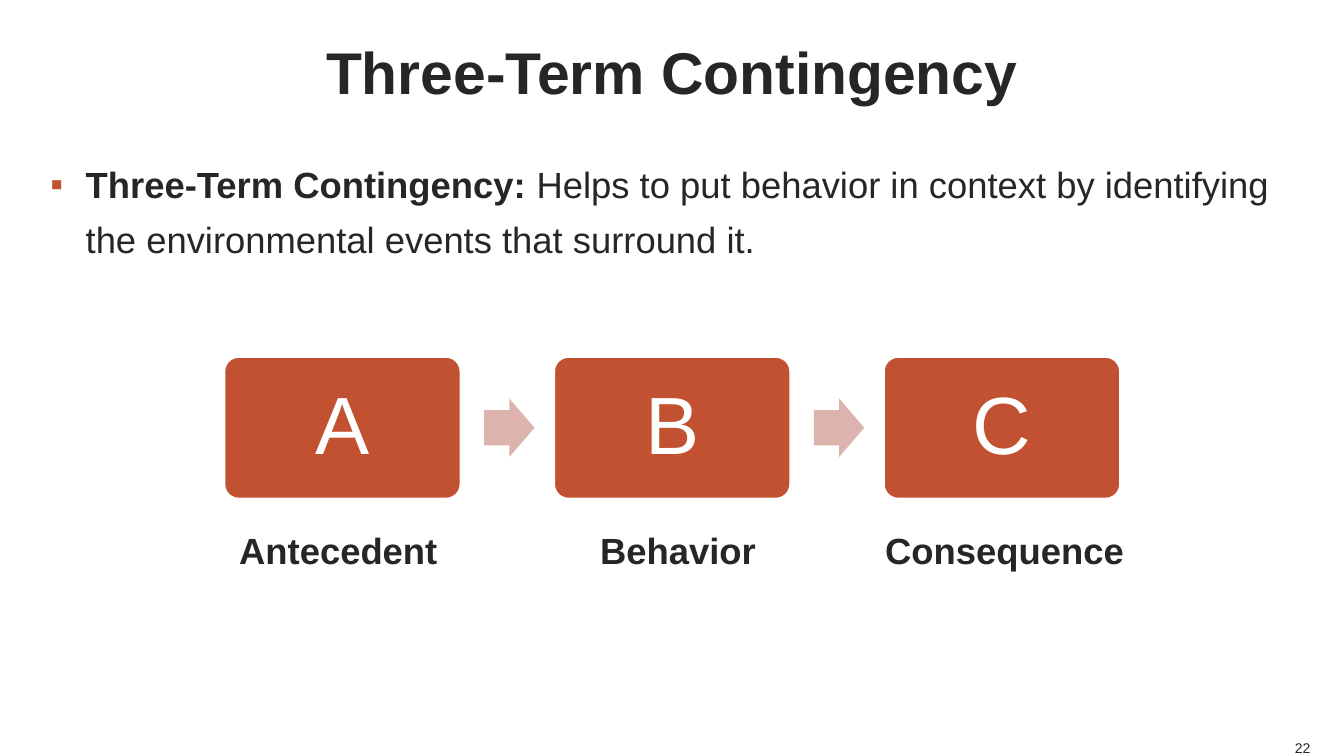
from lxml import etree
from pptx import Presentation
from pptx.dml.color import RGBColor
from pptx.enum.shapes import MSO_SHAPE
from pptx.enum.text import MSO_ANCHOR, PP_ALIGN
from pptx.oxml.ns import qn
from pptx.util import Cm, Pt

BOX, ARROW = MSO_SHAPE.ROUNDED_RECTANGLE, MSO_SHAPE.RIGHT_ARROW
TOP, MID, LOW = MSO_ANCHOR.TOP, MSO_ANCHOR.MIDDLE, MSO_ANCHOR.BOTTOM
LEFT, CENTER, RIGHT = PP_ALIGN.LEFT, PP_ALIGN.CENTER, PP_ALIGN.RIGHT
COLORS = {"ink": "262626", "rust": "C25131", "pink": "DDB3AE", "white": "FFFFFF"}
FONT = "Arial"

deck = Presentation()
deck.slide_width, deck.slide_height = Cm(33.87), Cm(19.05)
slide = deck.slides.add_slide(deck.slide_layouts[6])


def write(frame, text, size, color="ink", bold=False, align=CENTER, anchor=MID):
    """Put one styled paragraph in a frame without margins and return it."""
    frame.margin_left = frame.margin_right = 0
    frame.margin_top = frame.margin_bottom = 0
    frame.word_wrap = True
    frame.vertical_anchor = anchor
    frame.text = text
    para = frame.paragraphs[0]
    para.alignment = align
    font = para.runs[0].font
    font.name, font.size, font.bold = FONT, Pt(size), bold
    font.color.rgb = RGBColor.from_string(COLORS[color])
    return para


def draw(kind, left, top, width, height, color):
    shape = slide.shapes.add_shape(kind, Cm(left), Cm(top), Cm(width), Cm(height))
    shape.shadow.inherit = False
    shape.fill.solid()
    shape.fill.fore_color.rgb = RGBColor.from_string(COLORS[color])
    shape.line.fill.background()
    return shape


# Title
title = slide.shapes.add_textbox(Cm(1.27), Cm(0), Cm(31.32), Cm(3.56))
write(title.text_frame, "Three-Term Contingency", 42, bold=True)

# Definition with a square bullet
body = slide.shapes.add_textbox(Cm(1.27), Cm(3.81), Cm(31.32), Cm(3.6))
para = write(body.text_frame, "Three-Term Contingency: ", 26, bold=True,
             align=LEFT, anchor=TOP)
para.line_spacing = 1.25
props = para._p.get_or_add_pPr()
props.set("marL", str(Cm(0.89)))
props.set("indent", str(-Cm(0.89)))
tint = etree.SubElement(props, qn("a:buClr"))
etree.SubElement(tint, qn("a:srgbClr"), val=COLORS["rust"])
etree.SubElement(props, qn("a:buFont"), typeface=FONT)
etree.SubElement(props, qn("a:buChar"), char="▪")
run = para.add_run()
run.text = ("Helps to put behavior in context by identifying "
            "the environmental events that surround it.")
run.font.name, run.font.size, run.font.bold = FONT, Pt(26), False
run.font.color.rgb = RGBColor.from_string(COLORS["ink"])

# Three steps: a lettered box with its label, and an arrow to the next
STEP = 8.31
STEPS = [("A", "Antecedent", 8.53), ("B", "Behavior", 17.09),
         ("C", "Consequence", 25.32)]
for i, (letter, label, mid) in enumerate(STEPS):
    left = 5.66 + i * STEP
    box = draw(BOX, left, 9, 5.94, 3.56, "rust")
    box.adjustments[0] = 0.1
    box.line.color.rgb = RGBColor.from_string(COLORS["white"])
    box.line.width = Pt(1)
    write(box.text_frame, letter, 58, "white").line_spacing = 0.9
    if i < len(STEPS) - 1:
        arrow = draw(ARROW, left + 6.54, 10.04, 1.27, 1.48, "pink")
        arrow.adjustments[0], arrow.adjustments[1] = 0.6, 0.5
    name = slide.shapes.add_textbox(Cm(mid - 3.5), Cm(13.18), Cm(7), Cm(1.37))
    write(name.text_frame, label, 26, bold=True)

# Slide number
page = slide.shapes.add_textbox(Cm(32.02), Cm(18.62), Cm(1), Cm(0.43))
write(page.text_frame, "22", 10, align=RIGHT, anchor=LOW)

deck.save("out.pptx")
